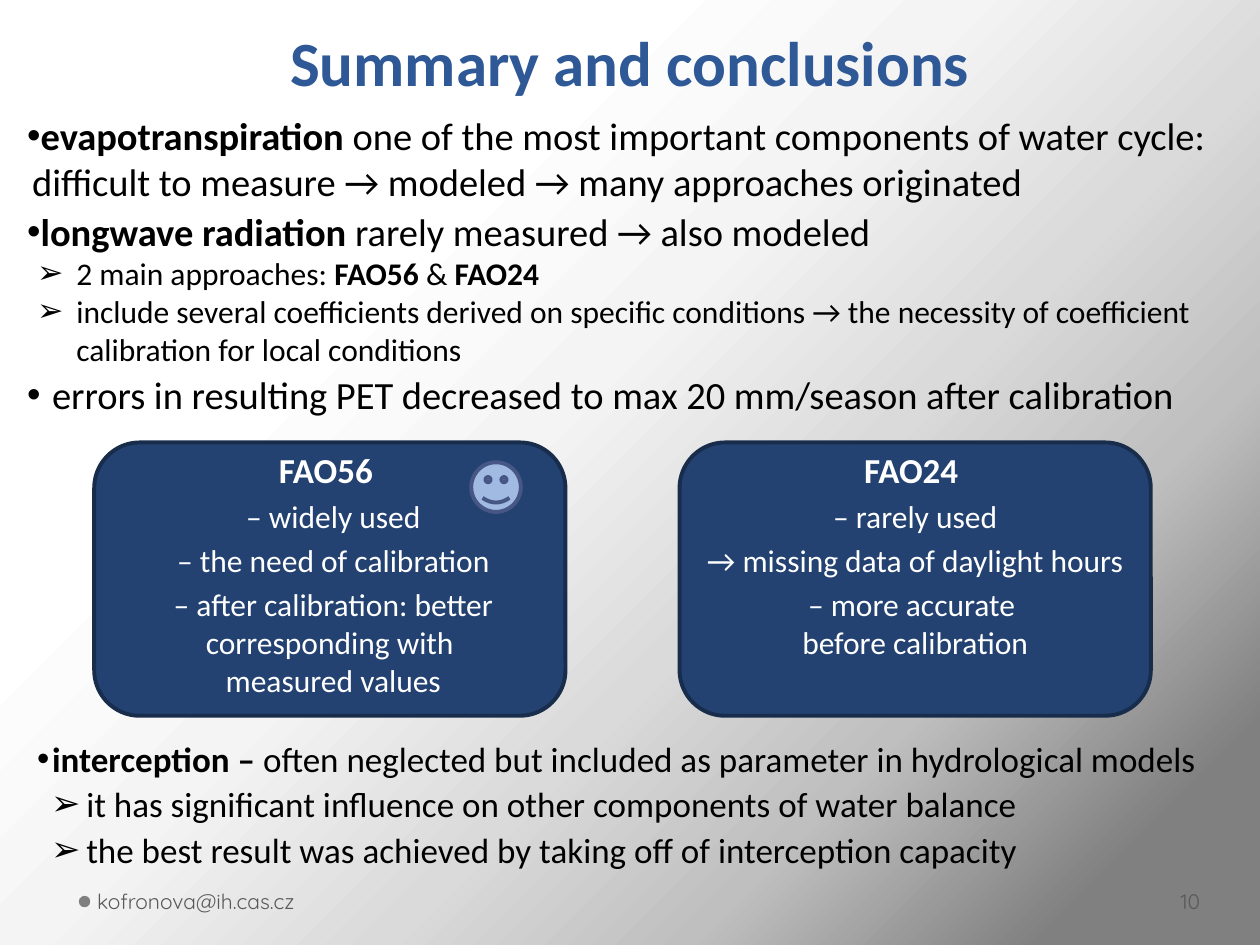
from lxml import etree
from pptx import Presentation
from pptx import util as u
from pptx.dml.color import RGBColor
from pptx.enum import shapes, text
from pptx.oxml import ns

BLUE = RGBColor(0x2F, 0x58, 0x97)
NAVY = RGBColor(0x23, 0x42, 0x71)
NAVY_EDGE = RGBColor(0x18, 0x2C, 0x4B)
FACE = RGBColor(0xA0, 0xBA, 0xE1)
FACE_EDGE = RGBColor(0x47, 0x57, 0x85)
GREY = RGBColor(0x80, 0x80, 0x80)
FOOTER = RGBColor(0x59, 0x59, 0x59)
BLACK = RGBColor(0, 0, 0)
WHITE = RGBColor(0xFF, 0xFF, 0xFF)
SHADES = [(29, "FFFFFF"), (44, "F4F4F4"), (60, "DADADA"), (74, "BFBFBF"), (90, "808080")]

FACTS = [
    ("•", 0.1, -0.97, 22, [("evapotranspiration ", True),
                           ("one of the most important components of water cycle: difficult to "
                            "measure → modeled → many approaches originated", False)]),
    ("•", 0.1, -0.97, 22, [("longwave radiation ", True),
                           ("rarely measured → also modeled", False)]),
    ("➢", 0.99, -0.79, 18, [("2 main approaches: ", False), ("FAO56", True),
                            (" & ", False), ("FAO24", True)]),
    ("➢", 0.99, -0.79, 18, [("include several coefficients derived on specific conditions → the "
                             "necessity of coefficient calibration for local conditions", False)]),
    ("•", 0.5, -0.97, 22, [("errors in resulting PET decreased to max 20 mm/season "
                            "after calibration", False)]),
]
INTERCEPTION = [
    ("•", 0.3, -0.79, 20, [("interception – ", True),
                           ("often neglected but included as parameter in hydrological models", False)]),
    ("➢", 0.99, -0.71, 20, [("it has significant influence on other components of water balance", False)]),
    ("➢", 0.99, -0.71, 20, [("the best result was achieved by taking off of interception capacity", False)]),
]
FAO56 = ["FAO56 ", " – widely used", " – the need of calibration",
         " – after calibration: better corresponding with\n measured values"]
FAO24 = ["FAO24 ", "– rarely used", "→ missing data of daylight hours",
         "– more accurate \nbefore calibration"]


def lengths(box):
    """Turn a box in centimetres into lengths."""
    return [u.Cm(value) for value in box]


def add_span(para, words, size, color, bold=False, font="Calibri"):
    """Add one formatted run to a paragraph."""
    span = para.add_run()
    span.text = words
    span.font.size = u.Pt(size)
    span.font.name = font
    span.font.bold = bold
    span.font.color.rgb = color


def add_frame(page, box, insets=(0.25, 0.13, 0.25, 0.13)):
    """Add a wrapping text box and return its text frame."""
    frame = page.shapes.add_textbox(*lengths(box)).text_frame
    frame.word_wrap = True
    (frame.margin_left, frame.margin_top,
     frame.margin_right, frame.margin_bottom) = lengths(insets)
    return frame


def add_paras(frame, count):
    """Return the given number of paragraphs in a fresh frame."""
    return [frame.paragraphs[0]] + [frame.add_paragraph() for _ in range(count - 1)]


def add_figure(page, kind, box, fill, edge=None):
    """Add a filled preset shape with an optional edge."""
    figure = page.shapes.add_shape(kind, *lengths(box))
    figure.shadow.inherit = False
    figure.fill.solid()
    figure.fill.fore_color.rgb = fill
    if edge is None:
        figure.line.fill.background()
    else:
        figure.line.color.rgb = edge
        figure.line.width = u.Pt(2.25)


def paint_background(page):
    """Give the page a radial gradient from its top left corner."""
    page.background.fill.gradient()
    gradient = page._element.find(".//" + ns.qn("a:gradFill"))
    for child in list(gradient):
        gradient.remove(child)
    stops = etree.SubElement(gradient, ns.qn("a:gsLst"))
    for place, shade in SHADES:
        stop = etree.SubElement(stops, ns.qn("a:gs"), pos=str(place * 1000))
        etree.SubElement(stop, ns.qn("a:srgbClr"), val=shade)
    circle = etree.SubElement(gradient, ns.qn("a:path"), path="circle")
    etree.SubElement(circle, ns.qn("a:fillToRect"), r="100000", b="100000")


def place_title(page, box, words):
    """Move and format the title placeholder."""
    title = page.shapes.title
    title.left, title.top, title.width, title.height = lengths(box)
    frame = title.text_frame
    frame.auto_size = text.MSO_AUTO_SIZE.NONE
    frame.vertical_anchor = text.MSO_ANCHOR.BOTTOM
    para = frame.paragraphs[0]
    para.alignment = text.PP_ALIGN.CENTER
    para.line_spacing = u.Pt(58)
    add_span(para, words, 36, BLUE, True)


def place_bullets(page, box, items, sub_gap):
    """Place a two-level bulleted list."""
    frame = add_frame(page, box)
    for para, (mark, margin, indent, size, spans) in zip(add_paras(frame, len(items)), items):
        main = mark == "•"
        para.level = 0 if main else 1
        para.space_before = u.Pt(2 if main else sub_gap)
        for words, bold in spans:
            add_span(para, words, size, BLACK, bold)
        props = para._p.get_or_add_pPr()
        props.set("marL", str(u.Cm(margin)))
        props.set("indent", str(u.Cm(indent)))
        etree.SubElement(props, ns.qn("a:buFont"), typeface="Arial")
        etree.SubElement(props, ns.qn("a:buChar"), char=mark)


def place_card(page, box, lines, smile=False):
    """Place a rounded card with a heading and centred lines."""
    left, top = box[:2]
    add_figure(page, shapes.MSO_SHAPE.ROUNDED_RECTANGLE, box, NAVY, NAVY_EDGE)
    frame = add_frame(page, box)
    for index, (para, line) in enumerate(zip(add_paras(frame, len(lines)), lines)):
        para.alignment = text.PP_ALIGN.CENTER
        para.space_before = u.Pt(3.6)
        for part, words in enumerate(line.split("\n")):
            if part:
                para.add_line_break()
            add_span(para, words, 18 if index else 20, WHITE, index == 0)
    if smile:
        add_figure(page, shapes.MSO_SHAPE.SMILEY_FACE,
                   (left + 7.6, top + 0.4, 1, 1), FACE, FACE_EDGE)


def place_footer(page, box, words, insets):
    """Place a footer text with a dot before it."""
    left, top = box[:2]
    add_figure(page, shapes.MSO_SHAPE.OVAL, (left - 0.24, top + 0.41, 0.23, 0.23), GREY)
    frame = add_frame(page, box, insets)
    frame.vertical_anchor = text.MSO_ANCHOR.MIDDLE
    add_span(frame.paragraphs[0], words, 12, FOOTER, font="Quicksand")


def main():
    """Build and save the deck."""
    deck = Presentation()
    deck.slide_width, deck.slide_height = u.Cm(25.4), u.Cm(19.05)
    page = deck.slides.add_slide(deck.slide_layouts[5])
    paint_background(page)
    place_title(page, (1.27, 0, 22.86, 2.13), "Summary and conclusions")
    place_bullets(page, (0.3, 2.13, 25, 6.4), FACTS, 0)
    place_card(page, (1.9, 8.92, 9.5, 5.51), FAO56, smile=True)
    place_card(page, (13.7, 8.92, 9.5, 5.51), FAO24)
    place_bullets(page, (0.5, 14.73, 24.9, 2.97), INTERCEPTION, 2)
    place_footer(page, (1.83, 17.65, 7.9, 1.02), "kofronova@ih.cas.cz", (0.13, 0.13, 0.25, 0.13))
    place_footer(page, (23.72, 17.65, 1.55, 1.02), "10", (0.08, 0.13, 0.13, 0.13))
    deck.save("out.pptx")


if __name__ == "__main__":
    main()
